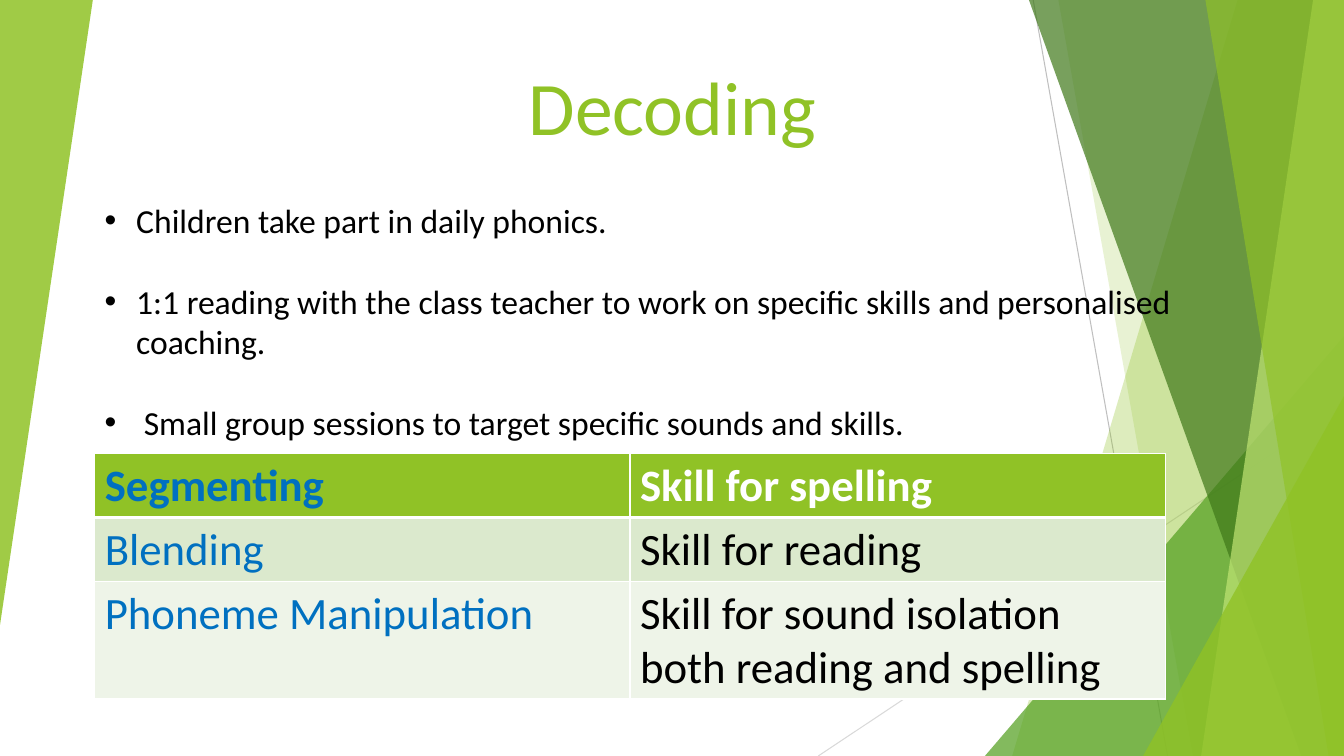
from lxml.etree import SubElement
from pptx import Presentation
from pptx.dml.color import RGBColor as RGB
from pptx.enum.shapes import MSO_CONNECTOR as LINK, MSO_SHAPE as SHAPE
from pptx.enum.text import MSO_ANCHOR as ANCHOR, PP_ALIGN as ALIGN
from pptx.oxml import parse_xml
from pptx.oxml.ns import nsdecls, qn
from pptx.util import Pt

WIDE, HIGH = 960, 540
FONT = "Calibri"
HUES = {
    "lime": "90C226", "leaf": "54A021", "moss": "3F7819", "pale": "C0E474",
    "gray": "BFBFBF", "mist": "D9D9D9", "blue": "0070C0", "black": "000000",
    "white": "FFFFFF", "band": "DBE9CD", "light": "EEF4E8",
}


def hue(name):
    return RGB.from_string(HUES[name])


def style(para, size, color, bold=False):
    for run in para.runs:
        font = run.font
        font.name, font.size, font.bold = FONT, Pt(size), bold
        font.color.rgb = hue(color)


def paint(shape, color, alpha):
    shape.shadow.inherit = False
    shape.line.fill.background()
    shape.fill.solid()
    shape.fill.fore_color.rgb = hue(color)
    tint = shape.fill._xPr.find(".//" + qn("a:srgbClr"))
    SubElement(tint, qn("a:alpha"), val=str(alpha * 1000))


def add_line(shapes, x1, y1, x2, y2, color):
    line = shapes.add_connector(LINK.STRAIGHT, Pt(x1), Pt(y1), Pt(x2), Pt(y2))
    line.line.color.rgb = hue(color)
    line.line.width = Pt(0.75)
    SubElement(line._element.spPr, qn("a:effectLst"))


def add_wedge(shapes, box, color, alpha, turn=0):
    wedge = shapes.add_shape(SHAPE.ISOSCELES_TRIANGLE, *map(Pt, box))
    wedge.adjustments[0] = 1
    wedge.rotation = turn
    paint(wedge, color, alpha)


def add_pane(shapes, top, foot, color, alpha):
    """Pane from a slanted left edge to the right side of the slide."""
    pen = shapes.build_freeform(Pt(top), 0)
    pen.add_line_segments([(Pt(x), Pt(y)) for x, y in
                           ((WIDE, 0), (WIDE, HIGH), (foot, HIGH))])
    paint(pen.convert_to_shape(), color, alpha)


def add_decor(shapes):
    add_line(shapes, 738, 0, 834, HIGH, "gray")
    add_line(shapes, WIDE, 290, 584.5, HIGH, "mist")
    # Slanted panes, with the low wedge between them
    add_pane(shapes, 884, 723, "lime", 30)
    add_pane(shapes, 756, 852, "lime", 20)
    add_wedge(shapes, (703.5, 240, 256.5, 300), "leaf", 72)
    add_pane(shapes, 735, 929.5, "moss", 70)
    add_pane(shapes, 938, 858, "pale", 70)
    add_pane(shapes, 861, 949, "lime", 65)
    # Corner wedges
    add_wedge(shapes, (816.5, 283, 143.5, 257), "lime", 80)
    add_wedge(shapes, (0, 0, 66.3, 446.4), "lime", 85, 180)


def add_title(shapes, box, text):
    frame = shapes.add_textbox(*map(Pt, box)).text_frame
    frame.word_wrap = True
    frame.vertical_anchor = ANCHOR.BOTTOM
    frame.text = text
    para = frame.paragraphs[0]
    para.alignment = ALIGN.CENTER
    style(para, 54, "lime")


def add_points(shapes, box, points):
    frame = shapes.add_textbox(*map(Pt, box)).text_frame
    frame.word_wrap = True
    for i, point in enumerate(points):
        para = frame.add_paragraph() if i else frame.paragraphs[0]
        para.text = point
        para.space_before = Pt(29 if i else 0)
        style(para, 24, "black")
        props = para._p.get_or_add_pPr()
        props.set("marL", str(Pt(22.5)))
        props.set("indent", str(Pt(-22.5)))
        SubElement(props, qn("a:buFont"), typeface="Arial")
        SubElement(props, qn("a:buChar"), char="•")


def add_edges(cell, base):
    """White rules on all four sides; base is the width of the lower one."""
    props = cell._tc.get_or_add_tcPr()
    sides = (("L", 1), ("R", 1), ("T", 1), ("B", base))
    for i, (side, width) in enumerate(sides):
        props.insert(i, parse_xml(
            f'<a:ln{side} {nsdecls("a")} w="{Pt(width)}"><a:solidFill>'
            f'<a:srgbClr val="{HUES["white"]}"/></a:solidFill></a:ln{side}>'))


def add_skills(shapes, box, rows, highs):
    grid = shapes.add_table(len(rows), 2, *map(Pt, box)).table
    fills = ("lime", "band", "light")
    for r, row in enumerate(rows):
        grid.rows[r].height = Pt(highs[r])
        head = r == 0
        inks = ("blue", "white" if head else "black")
        for c, text in enumerate(row):
            cell = grid.cell(r, c)
            cell.text = text
            style(cell.text_frame.paragraphs[0], 32, inks[c], head)
            cell.fill.solid()
            cell.fill.fore_color.rgb = hue(fills[r])
            add_edges(cell, 3 if head else 1)


def main():
    deck = Presentation()
    deck.slide_width, deck.slide_height = Pt(WIDE), Pt(HIGH)
    shapes = deck.slides.add_slide(deck.slide_layouts[6]).shapes

    add_decor(shapes)
    add_title(shapes, (155.5, -18.7, 661.7, 129.6), "Decoding ")
    add_points(shapes, (67.7, 139, 785.5, 152.6), (
        "Children take part in daily phonics.",
        "1:1 reading with the class teacher to work on specific skills "
        "and personalised coaching.",
        " Small group sessions to target specific sounds and skills.",
    ))
    add_skills(shapes, (67.7, 324, 764.6, 174), (
        ("Segmenting", "Skill for spelling"),
        ("Blending", "Skill for reading"),
        ("Phoneme Manipulation",
         "Skill for sound isolation both reading and spelling"),
    ), (45, 45, 84))

    deck.save("out.pptx")


if __name__ == "__main__":
    main()
